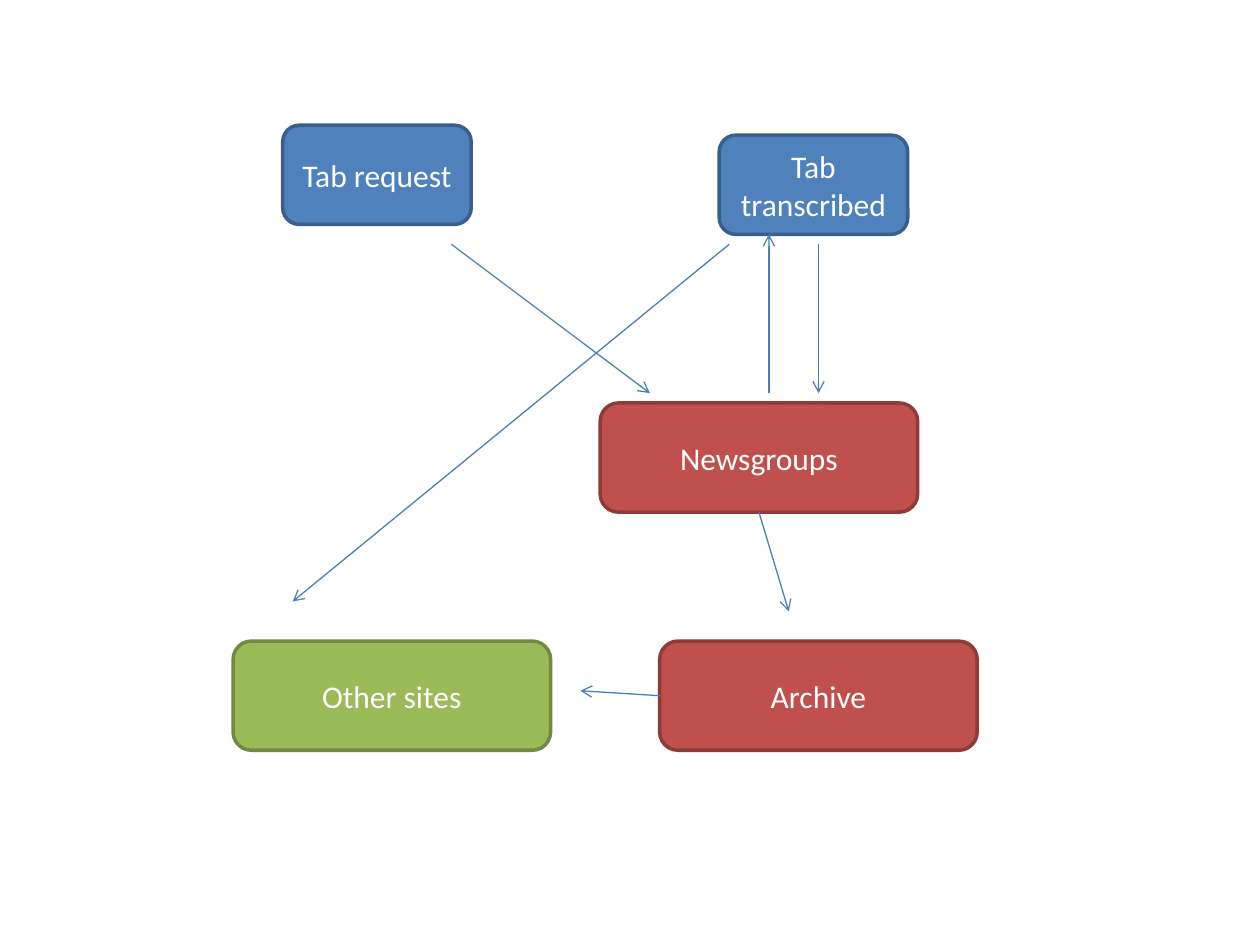
from pptx import Presentation
from pptx.dml.color import RGBColor
from pptx.enum.shapes import MSO_CONNECTOR, MSO_SHAPE
from pptx.enum.text import MSO_ANCHOR, PP_ALIGN
from pptx.oxml.ns import qn
from pptx.util import Inches, Mm, Pt
from lxml.etree import SubElement

WHITE = RGBColor(0xFF, 0xFF, 0xFF)
ARROW_BLUE = RGBColor(0x4B, 0x7E, 0xBC)
# (fill, outline) of each kind of step
BLUE = RGBColor(0x4F, 0x81, 0xBD), RGBColor(0x3A, 0x5F, 0x8C)
RED = RGBColor(0xC0, 0x50, 0x4D), RGBColor(0x8E, 0x3B, 0x39)
GREEN = RGBColor(0x9B, 0xBB, 0x59), RGBColor(0x73, 0x8A, 0x42)

LABEL_FORMAT = {"name": "Calibri", "size": Pt(18)}
CELL = Mm(2)
GRID_ORIGIN = Mm(1), Mm(1.25)
TAB_SIZE = 19, 10
SITE_SIZE = 32, 11
BOTTOM, LEFT = 2, 1

# label: (column, row), (columns, rows), colours
STEPS = {
    "Newsgroups": ((60, 40), SITE_SIZE, RED),
    "Archive": ((66, 64), SITE_SIZE, RED),
    "Other sites": ((23, 64), SITE_SIZE, GREEN),
    "Tab request": ((28, 12), TAB_SIZE, BLUE),
    "Tab transcribed": ((72, 13), TAB_SIZE, BLUE),
}
# start: a grid point, or a step and its side; end: a grid point
FLOWS = [
    ((45, 24), (65, 39)),
    ((77, 39), (77, 23)),
    ((82, 24), (82, 39)),
    (("Newsgroups", BOTTOM), (79, 61)),
    (("Archive", LEFT), (58, 69)),
    ((73, 24), (29, 60)),
]


def grid_point(origin, cell):
    return [start + steps * CELL for start, steps in zip(origin, cell)]


def add_step(slide, origin, label, cell, size, colours):
    width, height = (count * CELL for count in size)
    step = slide.shapes.add_shape(
        MSO_SHAPE.ROUNDED_RECTANGLE, *grid_point(origin, cell), width, height)
    step.shadow.inherit = False
    fill, outline = colours
    step.fill.solid()
    step.fill.fore_color.rgb = fill
    step.line.color.rgb = outline
    step.line.width = Pt(2)
    frame = step.text_frame
    frame.word_wrap = True
    frame.vertical_anchor = MSO_ANCHOR.MIDDLE
    paragraph = frame.paragraphs[0]
    paragraph.alignment = PP_ALIGN.CENTER
    run = paragraph.add_run()
    run.text = label
    for attribute, value in LABEL_FORMAT.items():
        setattr(run.font, attribute, value)
    run.font.color.rgb = WHITE
    return step


def add_flow(slide, origin, steps, start, end):
    """Draw an arrow, joined to a step when its start names one."""
    joined = start[0] in steps
    tip = grid_point(origin, end)
    begin = tip if joined else grid_point(origin, start)
    flow = slide.shapes.add_connector(MSO_CONNECTOR.STRAIGHT, *begin, *tip)
    if joined:
        label, side = start
        flow.begin_connect(steps[label], side)
    flow.line.color.rgb = ARROW_BLUE
    flow.line.width = Pt(0.75)
    SubElement(flow.line._get_or_add_ln(), qn("a:tailEnd"), type="arrow")
    SubElement(flow._element.spPr, qn("a:effectLst"))


def add_flowchart(slide, origin):
    steps = {label: add_step(slide, origin, label, *layout)
             for label, layout in STEPS.items()}
    for start, end in FLOWS:
        add_flow(slide, origin, steps, start, end)


def main():
    deck = Presentation()
    deck.slide_width, deck.slide_height = Inches(10), Inches(7.5)
    blank_layout = deck.slide_layouts[6]
    add_flowchart(deck.slides.add_slide(blank_layout), GRID_ORIGIN)
    deck.save("out.pptx")


if __name__ == "__main__":
    main()
